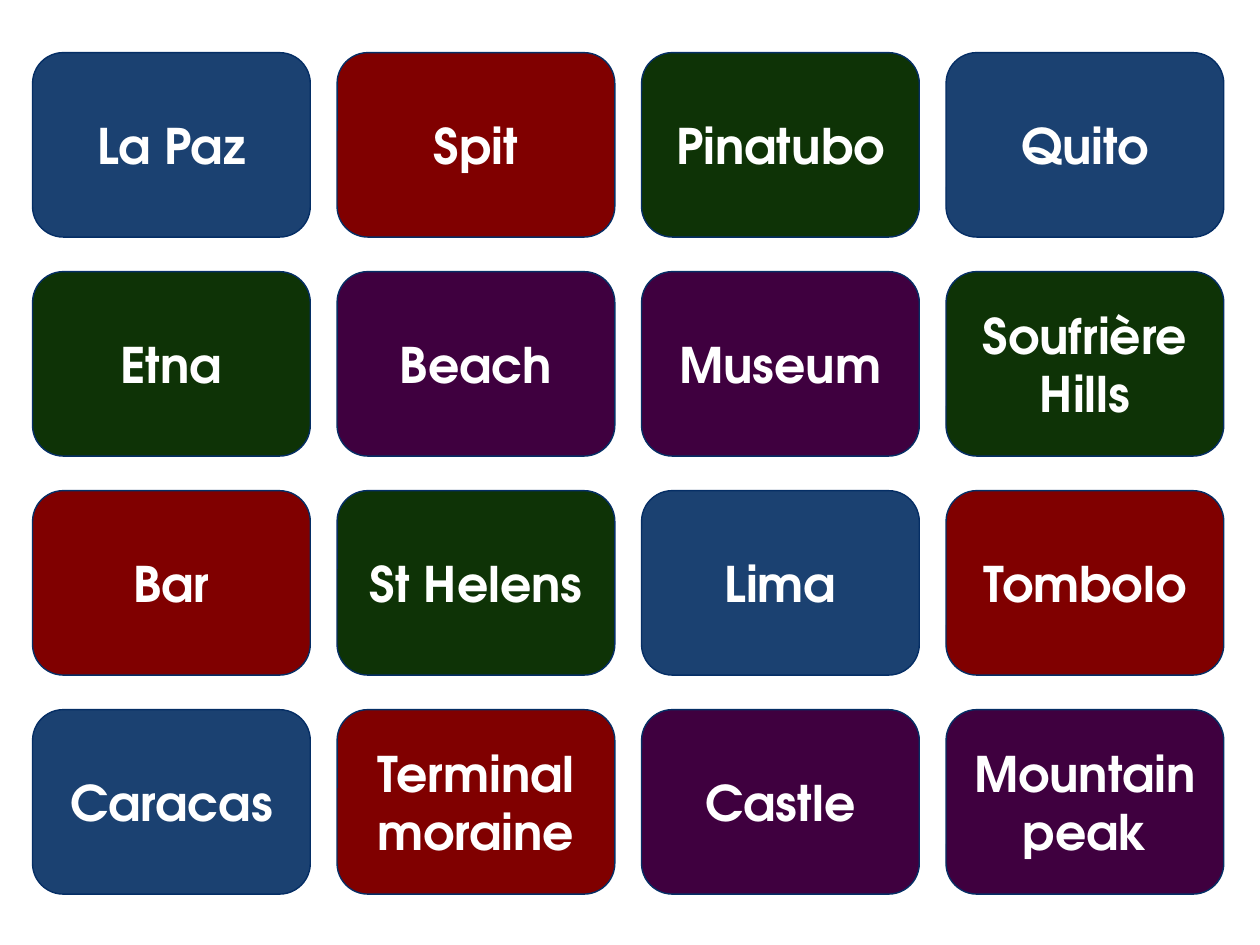
from pptx import Presentation
from pptx.dml.color import RGBColor
from pptx.enum.shapes import MSO_SHAPE
from pptx.enum.text import MSO_ANCHOR, PP_ALIGN
from pptx.util import Pt

ROUNDED = MSO_SHAPE.ROUNDED_RECTANGLE
MIDDLE = MSO_ANCHOR.MIDDLE
CENTER = PP_ALIGN.CENTER

FONT = "TeX Gyre Adventor"
TEXT_COLOR = "FFFFFF"
BORDER_COLOR = "052E65"
CITY, LANDFORM, VOLCANO, ATTRACTION = "1B4171", "800000", "0E3306", "3F003F"

LEFT, TOP = 18.6, 30.1
CARD_WIDTH, CARD_HEIGHT = 158.7, 105.4
COLUMN_STEP, ROW_STEP = 174, 125.15

CARD_ROWS = [
    [("La Paz", CITY), ("Spit", LANDFORM), ("Pinatubo", VOLCANO), ("Quito", CITY)],
    [("Etna", VOLCANO), ("Beach", ATTRACTION), ("Museum", ATTRACTION), ("Soufrière Hills", VOLCANO)],
    [("Bar", LANDFORM), ("St Helens", VOLCANO), ("Lima", CITY), ("Tombolo", LANDFORM)],
    [("Caracas", CITY), ("Terminal moraine", LANDFORM), ("Castle", ATTRACTION), ("Mountain peak", ATTRACTION)],
]


def set_color(color_format, hex_color):
    """Apply a hex colour to a fill, line or font colour."""
    color_format.rgb = RGBColor.from_string(hex_color)


def add_label(card, label):
    """Write the centred label of a card."""
    frame = card.text_frame
    frame.word_wrap = True
    frame.vertical_anchor = MIDDLE
    paragraph = frame.paragraphs[0]
    paragraph.alignment = CENTER
    run = paragraph.add_run()
    run.text = label
    run.font.name = FONT
    run.font.size = Pt(28)
    run.font.bold = True
    set_color(run.font.color, TEXT_COLOR)


def add_card(slide, row, column, label, category_color):
    """Place one rounded card in the grid."""
    card = slide.shapes.add_shape(
        ROUNDED,
        Pt(LEFT + column * COLUMN_STEP),
        Pt(TOP + row * ROW_STEP),
        Pt(CARD_WIDTH),
        Pt(CARD_HEIGHT),
    )
    card.shadow.inherit = False
    card.fill.solid()
    set_color(card.fill.fore_color, category_color)
    set_color(card.line.color, BORDER_COLOR)
    card.line.width = Pt(0.79)
    add_label(card, label)


def main():
    """Build the four-by-four wall of cards."""
    presentation = Presentation()
    presentation.slide_width = Pt(720)
    presentation.slide_height = Pt(540)
    slide = presentation.slides.add_slide(presentation.slide_layouts[6])
    for row, cards in enumerate(CARD_ROWS):
        for column, (label, category_color) in enumerate(cards):
            add_card(slide, row, column, label, category_color)
    presentation.save("out.pptx")


if __name__ == "__main__":
    main()
